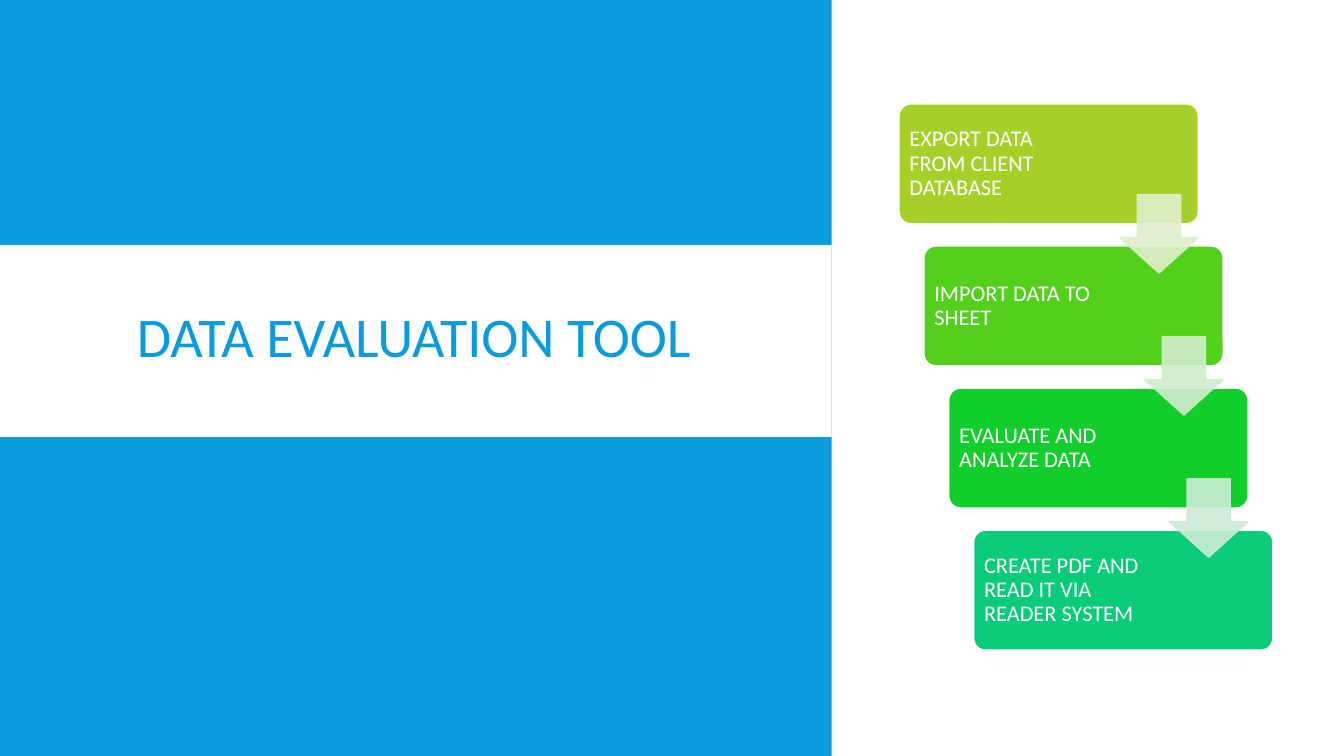
"""Build the data evaluation tool slide: a title panel beside a four-step staircase."""
from lxml import etree
from pptx import Presentation
from pptx.dml.color import RGBColor
from pptx.enum import shapes, text
from pptx.oxml import ns
from pptx.util import Pt

FONT = "Calibri"
BLUE, WHITE = "099BDD", "FFFFFF"
TITLE = "DATA EVALUATION TOOL"
PANELS = [
    (0, 0, 594, 540, BLUE),
    (0, 175, 594, 137, WHITE),
]
STEPS = [
    ("EXPORT DATA FROM CLIENT DATABASE", "A5D028", 100),
    ("IMPORT DATA TO SHEET", "53D01C", 79),
    ("EVALUATE AND ANALYZE DATA", "12CE2B", 79),
    ("CREATE PDF AND READ IT VIA READER SYSTEM", "08CC78", 79),
]
ARROW_COLORS = ["E1EECD", "D1EDCC", "CCECD7"]
ARROW_ALPHA = 90

STEP_DX, STEP_DY = 17.75, 101.5
BOX_LEFT, BOX_TOP, BOX_W, BOX_H = 642.2, 74.2, 213.8, 85.7
ARROW_LEFT, ARROW_TOP, ARROW_SIZE = 799.9, 139, 56
INSET = 5


def color(hex_code):
    return RGBColor.from_string(hex_code)


def add_block(slide, kind, left, top, width, height, fill, line=None):
    block = slide.shapes.add_shape(kind, Pt(left), Pt(top), Pt(width), Pt(height))
    block.shadow.inherit = False
    block.fill.solid()
    block.fill.fore_color.rgb = color(fill)
    if line:
        block.line.color.rgb = color(line)
        block.line.width = Pt(1)
    else:
        block.line.fill.background()
    return block


def style_paragraph(paragraph, size, hex_code, align, spacing):
    paragraph.font.name = FONT
    paragraph.font.size = Pt(size)
    paragraph.font.color.rgb = color(hex_code)
    paragraph.alignment = align
    paragraph.line_spacing = spacing


def add_title(slide):
    title = slide.shapes.title
    title.left, title.top, title.width, title.height = Pt(59), Pt(184), Pt(473), Pt(119)
    title.text_frame.text = TITLE
    title.text_frame.vertical_anchor = text.MSO_ANCHOR.MIDDLE
    style_paragraph(title.text_frame.paragraphs[0], 40, BLUE, text.PP_ALIGN.CENTER, 0.85)
    title.element.getparent().append(title.element)


def add_step(slide, index, label, fill, right_inset):
    step = add_block(slide, shapes.MSO_SHAPE.ROUNDED_RECTANGLE,
                     BOX_LEFT + index * STEP_DX, BOX_TOP + index * STEP_DY,
                     BOX_W, BOX_H, fill, WHITE)
    step.adjustments[0] = 0.1
    frame = step.text_frame
    frame.text = label
    frame.word_wrap = True
    frame.vertical_anchor = text.MSO_ANCHOR.MIDDLE
    frame.margin_left = frame.margin_top = frame.margin_bottom = Pt(INSET)
    frame.margin_right = Pt(right_inset)
    style_paragraph(frame.paragraphs[0], 16, WHITE, text.PP_ALIGN.LEFT, 0.9)


def add_arrow(slide, index, fill):
    arrow = add_block(slide, shapes.MSO_SHAPE.DOWN_ARROW,
                      ARROW_LEFT + index * STEP_DX, ARROW_TOP + index * STEP_DY,
                      ARROW_SIZE, ARROW_SIZE, fill, fill)
    arrow.adjustments[0], arrow.adjustments[1] = 0.55, 0.45
    for tint in arrow.element.spPr.iter(ns.qn("a:srgbClr")):
        etree.SubElement(tint, ns.qn("a:alpha"), val=str(ARROW_ALPHA * 1000))


def main():
    deck = Presentation()
    deck.slide_width, deck.slide_height = Pt(960), Pt(540)
    slide = deck.slides.add_slide(deck.slide_layouts[5])
    for left, top, width, height, fill in PANELS:
        add_block(slide, shapes.MSO_SHAPE.RECTANGLE, left, top, width, height, fill)
    add_title(slide)
    for index, (label, fill, right_inset) in enumerate(STEPS):
        add_step(slide, index, label, fill, right_inset)
    for index, fill in enumerate(ARROW_COLORS):
        add_arrow(slide, index, fill)
    deck.save("out.pptx")


if __name__ == "__main__":
    main()
